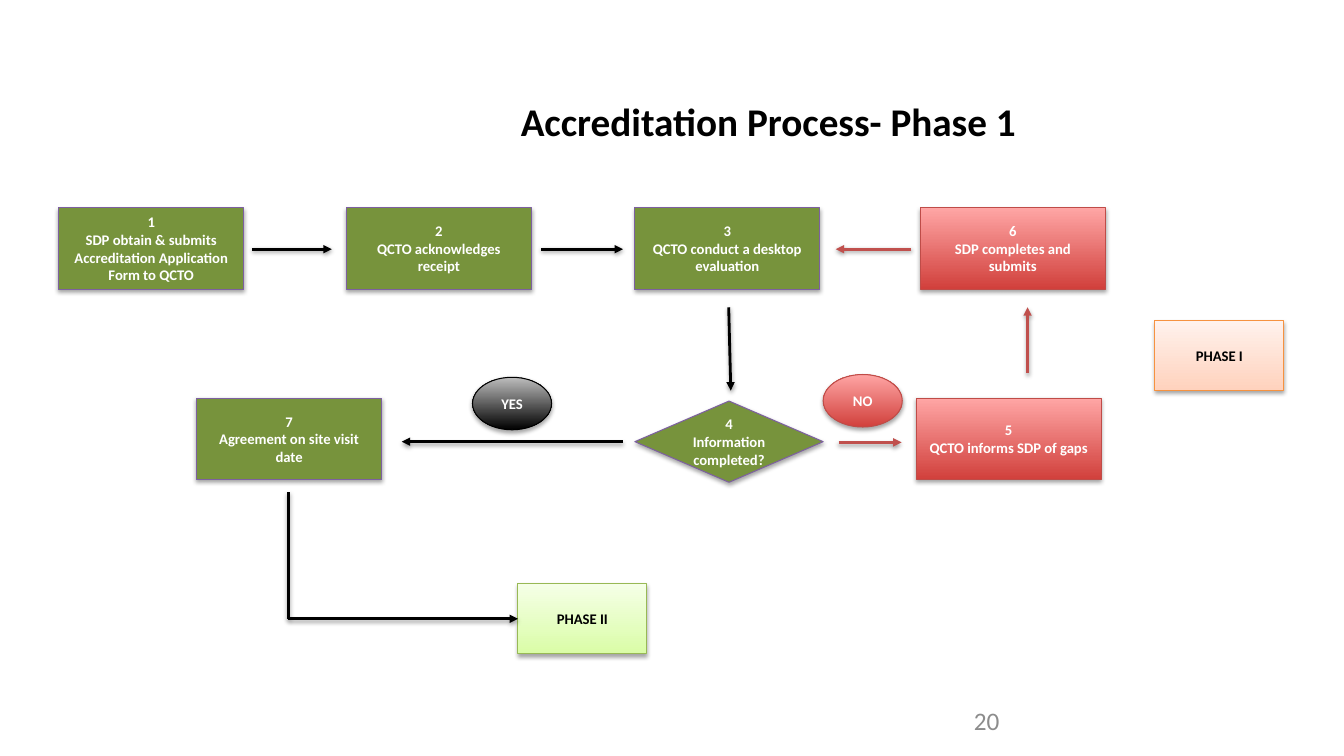
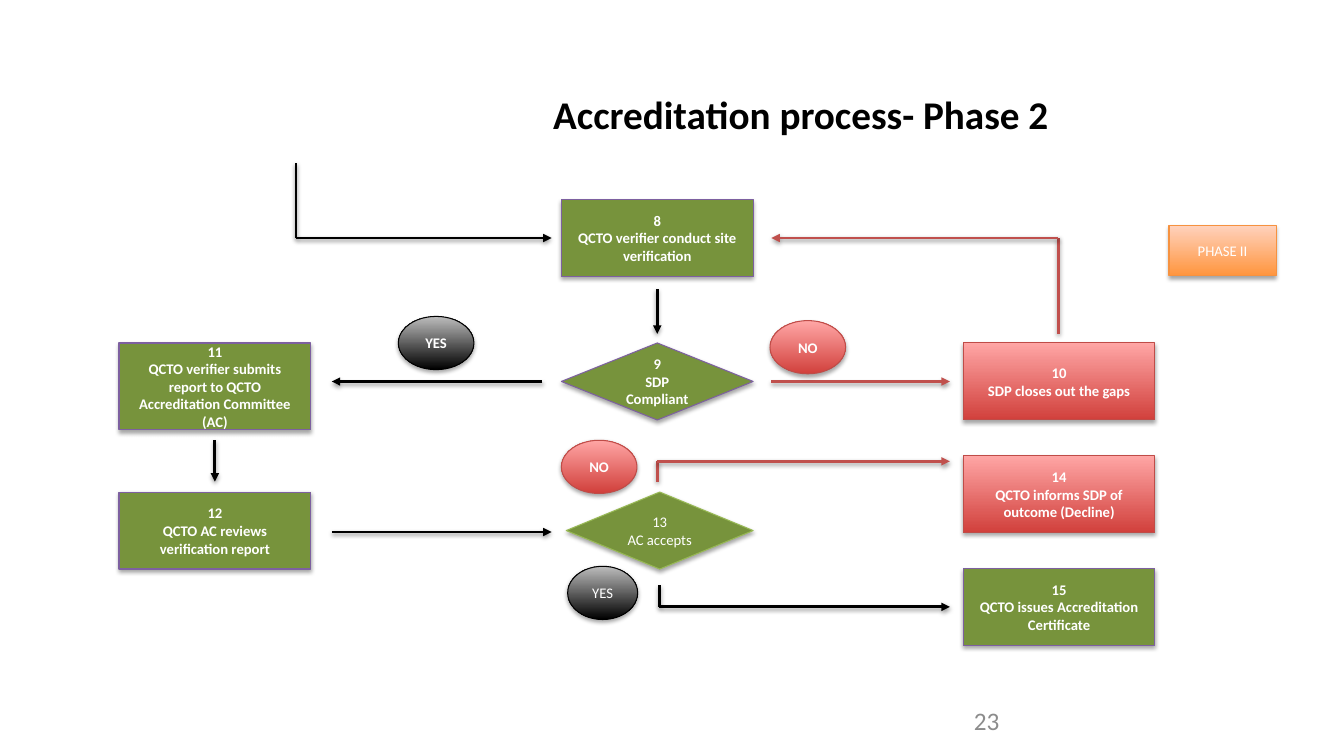
from dataclasses import dataclass

from lxml import etree
from pptx import Presentation
from pptx.dml.color import RGBColor
from pptx.enum import shapes, text
from pptx.oxml.ns import qn
from pptx.util import Pt

RECTANGLE = shapes.MSO_SHAPE.RECTANGLE
DECISION = shapes.MSO_SHAPE.FLOWCHART_DECISION
OVAL = shapes.MSO_SHAPE.OVAL
ALIGN = text.PP_ALIGN
ANCHOR = text.MSO_ANCHOR


@dataclass(frozen=True)
class Style:
    """A fill of one colour, or of two from bottom to top."""
    fill: tuple
    line: str
    ink: str = "FFFFFF"
    bold: bool = True


@dataclass(frozen=True)
class Theme:
    font: str = "Calibri"
    title_size: float = 28
    number_size: float = 18
    label_size: float = 10.5
    outline: float = 0.75
    arrow_width: float = 2
    black: str = "000000"
    gray: str = "8C8C8C"
    red: str = "C0504D"
    step: Style = Style(("77933C",), "7D60A0")
    accept: Style = Style(("77933C",), "98B955", bold=False)
    gap: Style = Style(("D1403C", "FFA6A5"), "BF4C48")
    yes: Style = Style(("000000", "BDBDBD"), "000000")
    yes_light: Style = Style(("000000", "BDBDBD"), "000000", bold=False)
    phase_one: Style = Style(("FFD2BD", "FFF2ED"), "F69240", "000000")
    phase_two: Style = Style(("DAFDA7", "F5FFE7"), "98B955", "000000")
    phase_two_tag: Style = Style(("FF953E", "FFD2BD"), "F69240", bold=False)


THEME = Theme()


def set_values(target, values):
    for name, value in values.items():
        setattr(target, name, value)


def place(shape, box):
    names = ("left", "top", "width", "height")
    set_values(shape, dict(zip(names, map(Pt, box))))


def write(shape, content, size, color, bold=False, align=ALIGN.CENTER, **frame_values):
    frame = shape.text_frame
    frame.text = content
    set_values(frame, {"word_wrap": True, "auto_size": text.MSO_AUTO_SIZE.NONE,
                       "vertical_anchor": ANCHOR.MIDDLE, **frame_values})
    for paragraph in frame.paragraphs:
        paragraph.alignment = align
        set_values(paragraph.font, {"name": THEME.font, "size": Pt(size), "bold": bold})
        paragraph.font.color.rgb = RGBColor.from_string(color)


def add_shadow(shape, distance, opacity):
    effects = etree.SubElement(shape.element.spPr, qn("a:effectLst"))
    shadow = etree.SubElement(effects, qn("a:outerShdw"), blurRad=str(Pt(3.1)),
                              dist=str(Pt(distance)), dir="5400000", rotWithShape="0")
    color = etree.SubElement(shadow, qn("a:srgbClr"), val=THEME.black)
    etree.SubElement(color, qn("a:alpha"), val=str(opacity * 1000))


def paint(fill, colors):
    if len(colors) == 1:
        fill.solid()
        fill.fore_color.rgb = RGBColor.from_string(colors[0])
        return
    fill.gradient()
    fill.gradient_angle = 90
    for stop, color, position in zip(fill.gradient_stops, colors, (0, 1)):
        stop.color.rgb = RGBColor.from_string(color)
        stop.position = position


def add_node(slide, kind, label, box, style):
    shape = slide.shapes.add_shape(kind, *map(Pt, box))
    paint(shape.fill, style.fill)
    shape.line.color.rgb = RGBColor.from_string(style.line)
    shape.line.width = Pt(THEME.outline)
    add_shadow(shape, 1.8, 35)
    write(shape, label, THEME.label_size, style.ink, style.bold)
    return shape


def add_route(slide, color, *points, target=None):
    """Straight lines through the points, with an arrowhead at the last."""
    for start, end in zip(points, points[1:]):
        connector = slide.shapes.add_connector(
            shapes.MSO_CONNECTOR.STRAIGHT, *map(Pt, start + end))
        connector.line.color.rgb = RGBColor.from_string(color)
        connector.line.width = Pt(THEME.arrow_width)
        add_shadow(connector, 1.6, 38)
    line = connector.element.spPr.find(qn("a:ln"))
    etree.SubElement(line, qn("a:tailEnd"), type="triangle")
    if target is not None:
        connector.end_connect(target, 1)


def add_titled_slide(presentation, title, title_box, align, number):
    slide = presentation.slides.add_slide(presentation.slide_layouts[5])
    place(slide.shapes.title, title_box)
    write(slide.shapes.title, title, THEME.title_size, THEME.black, True, align,
          vertical_anchor=ANCHOR.BOTTOM, margin_bottom=Pt(26))
    number_box = slide.shapes.add_textbox(*map(Pt, (688.5, 500.5, 224, 28.5)))
    write(number_box, number, THEME.number_size, THEME.gray, align=ALIGN.LEFT)
    return slide


def build_phase_one(presentation):
    slide = add_titled_slide(presentation, "Accreditation Process- Phase 1",
                             (206, 46, 685.5, 83), ALIGN.CENTER, "20")
    width, height, top, bottom = 132, 58, 148.5, 284.5
    for label, left, y, style in (
            ("1\nSDP obtain & submits Accreditation Application Form to QCTO",
             42, top, THEME.step),
            ("2\nQCTO acknowledges receipt", 247.5, top, THEME.step),
            ("3\nQCTO conduct a desktop evaluation", 453.5, top, THEME.step),
            ("6\nSDP completes and submits", 657.5, top, THEME.gap),
            ("7\nAgreement on site visit date", 140.5, bottom, THEME.step),
            ("5\nQCTO informs SDP of gaps", 654.5, bottom, THEME.gap)):
        add_node(slide, RECTANGLE, label, (left, y, width, height), style)
    add_node(slide, DECISION, "4\nInformation completed?",
             (453.5, 286.5, 134.5, height), THEME.step)
    phase_two = add_node(slide, RECTANGLE, "PHASE II", (370, 417, 92, 50), THEME.phase_two)
    add_node(slide, RECTANGLE, "PHASE I", (825, 229, 92, 50), THEME.phase_one)

    top_line, bottom_line = 178, 315.5
    for color, *points in (
            (THEME.black, (180, top_line), (237, top_line)),
            (THEME.black, (386.5, top_line), (445, top_line)),
            (THEME.red, (651, top_line), (597, top_line)),
            (THEME.black, (520.5, 219.5), (522, 279)),
            (THEME.red, (599, 316), (644, 316)),
            (THEME.red, (734, 266.5), (734, 219.5)),
            (THEME.black, (445, bottom_line), (287, bottom_line))):
        add_route(slide, color, *points)
    add_route(slide, THEME.black, (206, 351.5), (206, 442), (370, 442), target=phase_two)
    add_node(slide, OVAL, "YES", (337.5, 269.5, 56.5, 37.5), THEME.yes)
    add_node(slide, OVAL, "NO", (588, 267.5, 56.5, 37.5), THEME.gap)


def build_phase_two(presentation):
    slide = add_titled_slide(presentation, "Accreditation process- Phase 2",
                             (212, 62, 544, 62), ALIGN.RIGHT, "23")
    width, height = 137, 55
    left, middle, right = 85, 401, 688
    for label, x, y, style in (
            ("8\nQCTO verifier conduct site verification", middle, 142.5, THEME.step),
            ("12\nQCTO AC reviews verification report", left, 351.5, THEME.step),
            ("10\nSDP closes out the gaps", right, 245, THEME.gap),
            ("14\nQCTO informs SDP of outcome (Decline)", right, 325.5, THEME.gap),
            ("15\nQCTO issues Accreditation Certificate", right, 406, THEME.step)):
        add_node(slide, RECTANGLE, label, (x, y, width, height), style)
    add_node(slide, RECTANGLE,
             "11\nQCTO verifier submits report to QCTO Accreditation Committee (AC)",
             (left, 245, width, 62), THEME.step)
    add_node(slide, RECTANGLE, "PHASE II", (835, 161, 76.5, 36), THEME.phase_two_tag)
    add_node(slide, DECISION, "9\nSDP Compliant", (middle, 245, width, height), THEME.step)
    add_node(slide, DECISION, "13\nAC accepts", (404.5, 351.5, 133.5, height), THEME.accept)

    for color, *points in (
            (THEME.black, (211.5, 116.5), (211.5, 170), (394, 170)),
            (THEME.black, (469.5, 206.5), (469.5, 238.5)),
            (THEME.black, (387.5, 272.5), (237, 272.5)),
            (THEME.black, (153.5, 314.5), (153.5, 344)),
            (THEME.black, (237, 380), (394, 380)),
            (THEME.black, (471, 418), (471, 433.5), (678.5, 433.5)),
            (THEME.red, (551, 272.5), (678.5, 272.5)),
            (THEME.red, (756, 238.5), (756, 170), (551, 170)),
            (THEME.red, (469.5, 344), (469.5, 329.5), (678.5, 329.5))):
        add_route(slide, color, *points)
    for label, x, y, oval_width, style in (
            ("NO", middle, 314.5, 54, THEME.gap),
            ("NO", 550, 229, 54, THEME.gap),
            ("YES", 284.5, 226, 54, THEME.yes),
            ("YES", 405.5, 404.5, 50, THEME.yes_light)):
        add_node(slide, OVAL, label, (x, y, oval_width, 38), style)


def main():
    presentation = Presentation()
    presentation.slide_width, presentation.slide_height = Pt(960), Pt(540)
    build_phase_one(presentation)
    build_phase_two(presentation)
    presentation.save("out.pptx")


if __name__ == "__main__":
    main()
